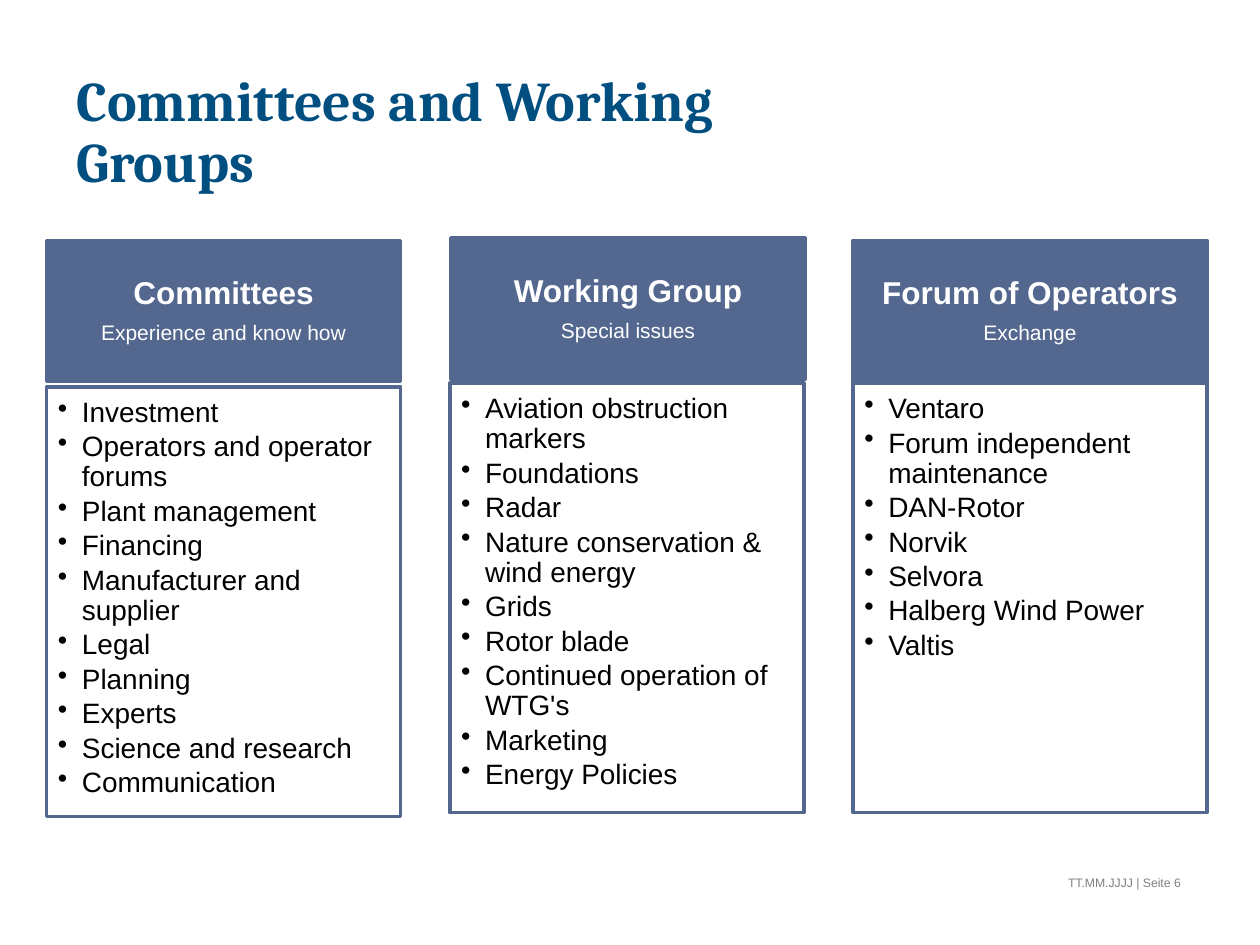
from lxml import etree
from pptx import Presentation
from pptx.dml.color import RGBColor
from pptx.enum.shapes import MSO_SHAPE
from pptx.enum.text import MSO_ANCHOR, PP_ALIGN
from pptx.oxml.ns import qn
from pptx.util import Inches, Pt

RECTANGLE = MSO_SHAPE.RECTANGLE
TOP, MIDDLE = MSO_ANCHOR.TOP, MSO_ANCHOR.MIDDLE
LEFT, CENTER, RIGHT = PP_ALIGN.LEFT, PP_ALIGN.CENTER, PP_ALIGN.RIGHT

COLORS = {"title": "004F80", "panel": "53678F", "heading": "FFFFFF",
          "item": "000000", "footer": "808080"}

FONTS = {
    "title": {"name": "Cambria", "size": Pt(32), "bold": True},
    "heading": {"name": "Arial", "size": Pt(18), "bold": True},
    "subheading": {"name": "Arial", "size": Pt(12), "bold": False},
    "item": {"name": "Arial", "size": Pt(16)},
    "footer": {"name": "Arial", "size": Pt(7)},
}
PARAGRAPHS = {
    "title": {"alignment": LEFT, "line_spacing": Pt(35)},
    "heading": {"alignment": CENTER, "line_spacing": 0.9, "space_after": Pt(6.3)},
    "subheading": {"alignment": CENTER, "line_spacing": 0.9, "space_after": Pt(4.2)},
    "item": {"alignment": LEFT, "line_spacing": 0.9, "space_after": Pt(2.4), "level": 1},
    "footer": {"alignment": RIGHT},
}
HEADER_FRAME = {"vertical_anchor": MIDDLE, "word_wrap": True,
                "margin_left": Inches(0.14), "margin_top": Inches(0.08),
                "margin_right": Inches(0.14), "margin_bottom": Inches(0.08)}
LIST_FRAME = {"vertical_anchor": TOP, "word_wrap": True,
              "margin_left": Inches(0.09), "margin_top": Inches(0.09),
              "margin_right": Inches(0.12), "margin_bottom": Inches(0.14)}

COLUMN_WIDTH, HEADER_HEIGHT, LIST_HEIGHT = 2.81, 1.12, 3.41
BULLET_INDENT = Inches(0.19)

# Each column: header position, list position, heading, subheading, items
COLUMNS = [
    ((0.37, 1.91), (0.37, 3.07), "Committees", "Experience and know how",
     ["Investment", "Operators and operator forums", "Plant management",
      "Financing", "Manufacturer and supplier", "Legal", "Planning", "Experts",
      "Science and research", "Communication"]),
    ((3.58, 1.89), (3.57, 3.04), "Working Group", "Special issues",
     ["Aviation obstruction markers", "Foundations", "Radar",
      "Nature conservation & wind energy", "Grids", "Rotor blade",
      "Continued operation of WTG's", "Marketing", "Energy Policies"]),
    ((6.77, 1.91), (6.77, 3.04), "Forum of Operators", "Exchange",
     ["Ventaro", "Forum independent maintenance", "DAN-Rotor", "Norvik",
      "Selvora", "Halberg Wind Power", "Valtis"]),
]


def apply_format(target, values):
    for attribute, value in values.items():
        setattr(target, attribute, value)


def rgb(name):
    return RGBColor.from_string(COLORS[name])


def add_bullet(paragraph):
    properties = paragraph._p.get_or_add_pPr()
    properties.set("marL", str(BULLET_INDENT))
    properties.set("indent", str(-BULLET_INDENT))
    etree.SubElement(properties, qn("a:buChar")).set("char", "•")


def write_lines(frame, lines):
    """Fill a text frame with (text, style, colour name) lines."""
    for index, (text, style, color) in enumerate(lines):
        paragraph = frame.add_paragraph() if index else frame.paragraphs[0]
        apply_format(paragraph, PARAGRAPHS[style])
        if style == "item":
            add_bullet(paragraph)
        run = paragraph.add_run()
        run.text = text
        apply_format(run.font, FONTS[style])
        run.font.color.rgb = rgb(color)


def add_label(slide, box, text, style):
    label = slide.shapes.add_textbox(*map(Inches, box))
    label.text_frame.word_wrap = True
    write_lines(label.text_frame, [(text, style, style)])


def add_panel(slide, position, height, frame_format, lines, filled):
    panel = slide.shapes.add_shape(
        RECTANGLE, *map(Inches, (*position, COLUMN_WIDTH, height)))
    panel.shadow.inherit = False
    if filled:
        panel.fill.solid()
        panel.fill.fore_color.rgb = rgb("panel")
    else:
        panel.fill.background()
    panel.line.color.rgb = rgb("panel")
    panel.line.width = Pt(2)
    apply_format(panel.text_frame, frame_format)
    write_lines(panel.text_frame, lines)


def add_column(slide, header_at, list_at, heading, subheading, items):
    add_panel(slide, header_at, HEADER_HEIGHT, HEADER_FRAME,
              [(heading, "heading", "heading"),
               (subheading, "subheading", "heading")], filled=True)
    add_panel(slide, list_at, LIST_HEIGHT, LIST_FRAME,
              [(item, "item", "item") for item in items], filled=False)


def main():
    presentation = Presentation()
    presentation.slide_width = Inches(10)
    presentation.slide_height = Inches(7.5)
    slide = presentation.slides.add_slide(presentation.slide_layouts[6])

    add_label(slide, (0.51, 0.52, 6.3, 1.07), "Committees and Working Groups", "title")
    add_label(slide, (6.3, 6.9, 3.17, 0.4), "TT.MM.JJJJ | Seite 6", "footer")
    for column in COLUMNS:
        add_column(slide, *column)

    presentation.save("out.pptx")


if __name__ == "__main__":
    main()
